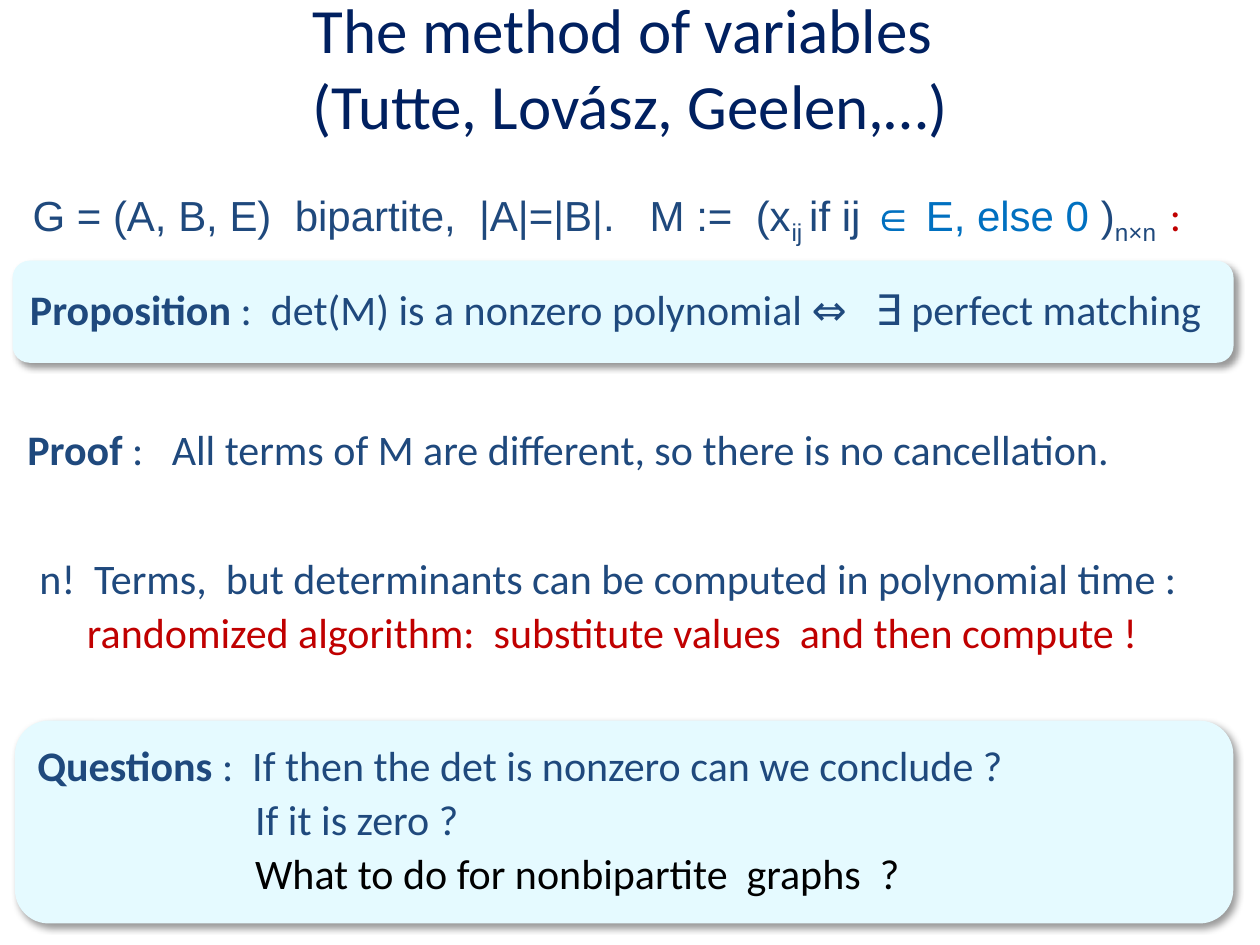
import pptx
import pptx.dml.color
import pptx.enum.shapes
import pptx.enum.text
import pptx.oxml
import pptx.oxml.ns
import pptx.util

Pt = pptx.util.Pt
RGBColor = pptx.dml.color.RGBColor
ANCHOR = pptx.enum.text.MSO_ANCHOR
SHAPE = pptx.enum.shapes.MSO_SHAPE

NAVY = RGBColor(0x00, 0x20, 0x60)
BLUE = RGBColor(0x1F, 0x49, 0x7D)
LIGHT_BLUE = RGBColor(0x00, 0x70, 0xC0)
RED = RGBColor(0xC0, 0x00, 0x00)
BLACK = RGBColor(0x00, 0x00, 0x00)
PALE = RGBColor(0xE5, 0xFA, 0xFF)

TITLE = "The method of variables \v(Tutte, Lovász, Geelen,…)"
TITLE_BOX = (36, -7.2, 648, 90)

# A run is (text, format); a paragraph is (left margin, runs).
ARIAL = {"font": "Arial"}
SUB = {"font": "Arial", "sub": True}
BOLD = {"bold": True}

# (box, filled card?, paragraphs)
BLOCKS = [
    ((11.5, 105.1, 714.2, 43.9), False, [
        (0, [("G = (A, B, E)  bipartite,  |A|=|B|.   M :=  (x", ARIAL),
             ("ij ", SUB), ("if ij ", ARIAL),
             ("∈ E, else 0 ", {"font": "Arial", "color": LIGHT_BLUE}),
             (")", ARIAL), ("n×n  ", SUB), (":", {"color": RED})]),
    ]),
    ((7.2, 149, 697.7, 58.3), True, [
        (0, [("Proposition", BOLD),
             (" :  det(M) is a nonzero polynomial ⇔   ∃ perfect matching", {})]),
    ]),
    ((8.6, 241.9, 696.2, 33.1), False, [
        (0, [("Proof", BOLD),
             (" :   All terms of M are different, so there is no cancellation.", {})]),
    ]),
    ((10.1, 315.4, 696.2, 65.5), False, [
        (5.4, [("n!  Terms,  but determinants can be computed in polynomial time :", {})]),
        (32.5, [("randomized algorithm:  substitute values  and then compute !",
                 {"color": RED})]),
    ]),
    ((8.6, 411.8, 696.2, 115.9), True, [
        (0, [("Questions", BOLD),
             (" :  If then the det is nonzero can we conclude ?", {})]),
        (124.5, [("If it is zero ?", {})]),
        (124.5, [("What to do for nonbipartite  graphs  ?", {"color": BLACK})]),
    ]),
]

SHADOW = (
    '<a:effectLst %s><a:outerShdw blurRad="%d" dist="%d" dir="2700000" algn="tl" '
    'rotWithShape="0"><a:srgbClr val="000000"><a:alpha val="40000"/></a:srgbClr>'
    '</a:outerShdw></a:effectLst>'
    % (pptx.oxml.ns.nsdecls("a"), Pt(4), Pt(3))
)


def style_run(r, size=24, font="Calibri", color=BLUE, bold=False, sub=False):
    r.font.size = Pt(size)
    r.font.name = font
    r.font.color.rgb = color
    r.font.bold = bold
    if sub:
        r.font._element.set("baseline", "-25000")


def add_card(slide, box):
    """Add a pale rounded rectangle with a soft shadow."""
    sp = slide.shapes.add_shape(SHAPE.ROUNDED_RECTANGLE, *map(Pt, box))
    sp.fill.solid()
    sp.fill.fore_color.rgb = PALE
    sp.line.fill.background()
    sp._element.spPr.append(pptx.oxml.parse_xml(SHADOW))
    sp.text_frame.vertical_anchor = ANCHOR.MIDDLE
    return sp


def add_block(slide, box, card, paragraphs):
    sp = add_card(slide, box) if card else slide.shapes.add_textbox(*map(Pt, box))
    tf = sp.text_frame
    tf.word_wrap = True
    for i, (margin, runs) in enumerate(paragraphs):
        p = tf.add_paragraph() if i else tf.paragraphs[0]
        p.alignment = pptx.enum.text.PP_ALIGN.LEFT
        p.line_spacing = 0.9
        p.space_before = Pt(4.8)
        p._p.get_or_add_pPr().set("marL", str(Pt(margin)))
        for text, style in runs:
            r = p.add_run()
            r.text = text
            style_run(r, **style)


def add_title(slide):
    tf = slide.shapes.add_textbox(*map(Pt, TITLE_BOX)).text_frame
    tf.word_wrap = True
    tf.vertical_anchor = ANCHOR.MIDDLE
    tf.text = TITLE
    p = tf.paragraphs[0]
    p.alignment = pptx.enum.text.PP_ALIGN.CENTER
    for r in p.runs:
        style_run(r, size=36, color=NAVY)


def main():
    prs = pptx.Presentation()
    prs.slide_width, prs.slide_height = Pt(720), Pt(540)
    slide = prs.slides.add_slide(prs.slide_layouts[6])
    add_title(slide)
    for block in BLOCKS:
        add_block(slide, *block)
    prs.save("out.pptx")


if __name__ == "__main__":
    main()
